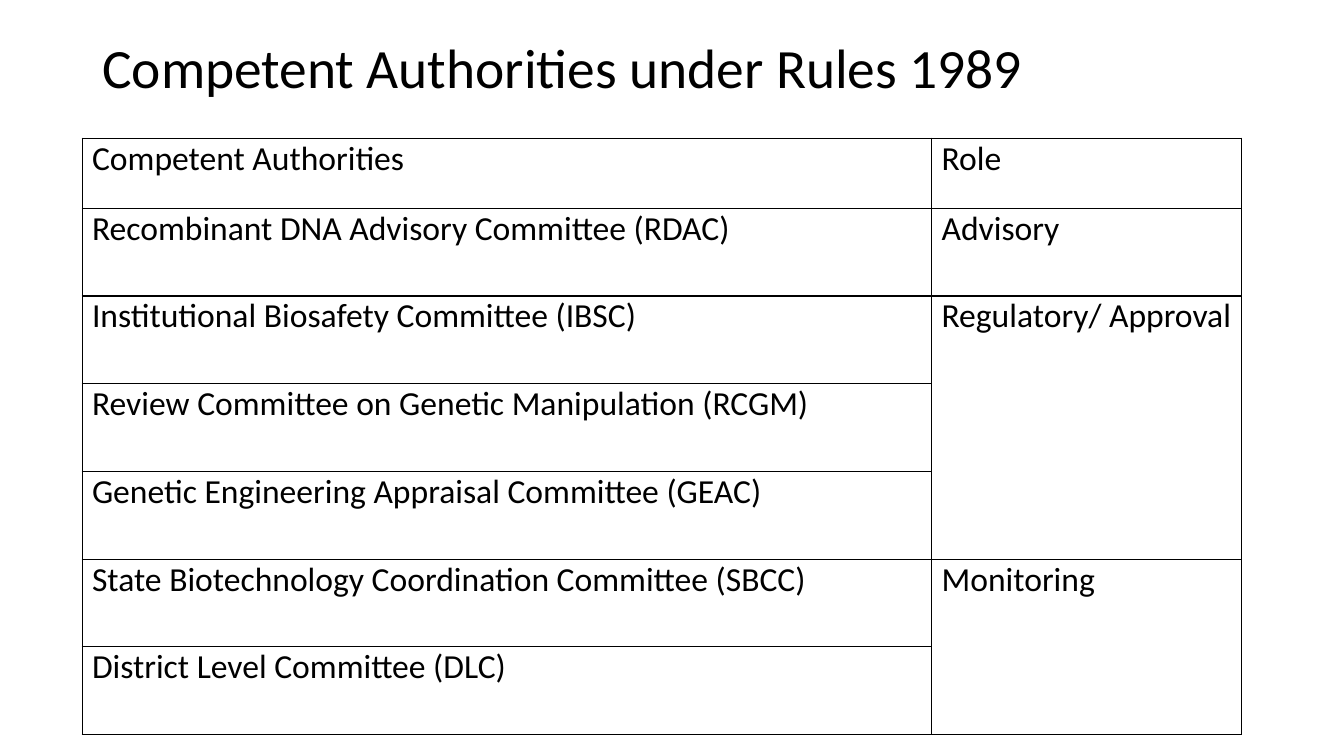
from dataclasses import dataclass

from lxml.etree import SubElement
from pptx import Presentation
from pptx.dml.color import RGBColor
from pptx.enum.text import MSO_ANCHOR
from pptx.oxml.ns import qn
from pptx.slide import Slide
from pptx.table import Table, _Cell
from pptx.util import Cm, Pt

FONT = "Calibri"
BLACK = "000000"
WHITE = "FFFFFF"
COLUMN_WIDTHS = (21.41, 7.8)
HEADER_HEIGHT = 1.77
ROW_HEIGHT = 2.21


@dataclass
class Authority:
    name: str
    role: str = ""
    role_rows: int = 1


AUTHORITIES = [
    Authority("Competent Authorities", "Role"),
    Authority("Recombinant DNA Advisory Committee (RDAC)", "Advisory"),
    Authority("Institutional Biosafety Committee (IBSC)", "Regulatory/ Approval", 3),
    Authority("Review Committee on Genetic Manipulation (RCGM)"),
    Authority("Genetic Engineering Appraisal Committee (GEAC)"),
    Authority("State Biotechnology Coordination Committee (SBCC)", "Monitoring", 2),
    Authority("District Level Committee (DLC)"),
]


def color(value: str) -> RGBColor:
    return RGBColor.from_string(value)


def set_font(p, size: float) -> None:
    p.font.name = FONT
    p.font.size = Pt(size)
    p.font.color.rgb = color(BLACK)


def add_title(s: Slide, text: str) -> None:
    tf = s.shapes.add_textbox(Cm(2.33), Cm(1.02), Cm(29.21), Cm(1.5)).text_frame
    tf.word_wrap = True
    tf.vertical_anchor = MSO_ANCHOR.MIDDLE
    tf.margin_top = tf.margin_bottom = 0
    p = tf.paragraphs[0]
    p.text = text
    p.line_spacing = 0.9
    set_font(p, 39.6)


def style_cell(cell: _Cell) -> None:
    tcPr = cell._tc.get_or_add_tcPr()
    for side in ("a:lnL", "a:lnR", "a:lnT", "a:lnB"):
        ln = SubElement(tcPr, qn(side), w=str(Pt(1)))
        fill = SubElement(ln, qn("a:solidFill"))
        SubElement(fill, qn("a:srgbClr"), val=BLACK)
    cell.fill.solid()
    cell.fill.fore_color.rgb = color(WHITE)
    cell.margin_left = Cm(0.25)
    cell.margin_right = cell.margin_top = cell.margin_bottom = 0


def write_cell(table: Table, row: int, col: int, text: str) -> None:
    cell = table.cell(row, col)
    style_cell(cell)
    p = cell.text_frame.paragraphs[0]
    p.text = text
    p.space_before = Pt(1.7)
    set_font(p, 24)


def add_authorities(s: Slide, authorities: list[Authority]) -> None:
    heights = [HEADER_HEIGHT] + [ROW_HEIGHT] * (len(authorities) - 1)
    table = s.shapes.add_table(
        len(heights), len(COLUMN_WIDTHS), Cm(2.07), Cm(3.48),
        Cm(sum(COLUMN_WIDTHS)), Cm(sum(heights)),
    ).table
    table.first_row = table.horz_banding = False
    for column, width in zip(table.columns, COLUMN_WIDTHS):
        column.width = Cm(width)
    for i, (authority, height) in enumerate(zip(authorities, heights)):
        table.rows[i].height = Cm(height)
        write_cell(table, i, 0, authority.name)
        write_cell(table, i, 1, authority.role)
        if authority.role_rows > 1:
            table.cell(i, 1).merge(table.cell(i + authority.role_rows - 1, 1))


def main() -> None:
    prs = Presentation()
    prs.slide_width, prs.slide_height = Cm(33.87), Cm(19.05)
    s = prs.slides.add_slide(prs.slide_layouts[6])
    add_title(s, "Competent Authorities under Rules 1989")
    add_authorities(s, AUTHORITIES)
    prs.save("out.pptx")


if __name__ == "__main__":
    main()
